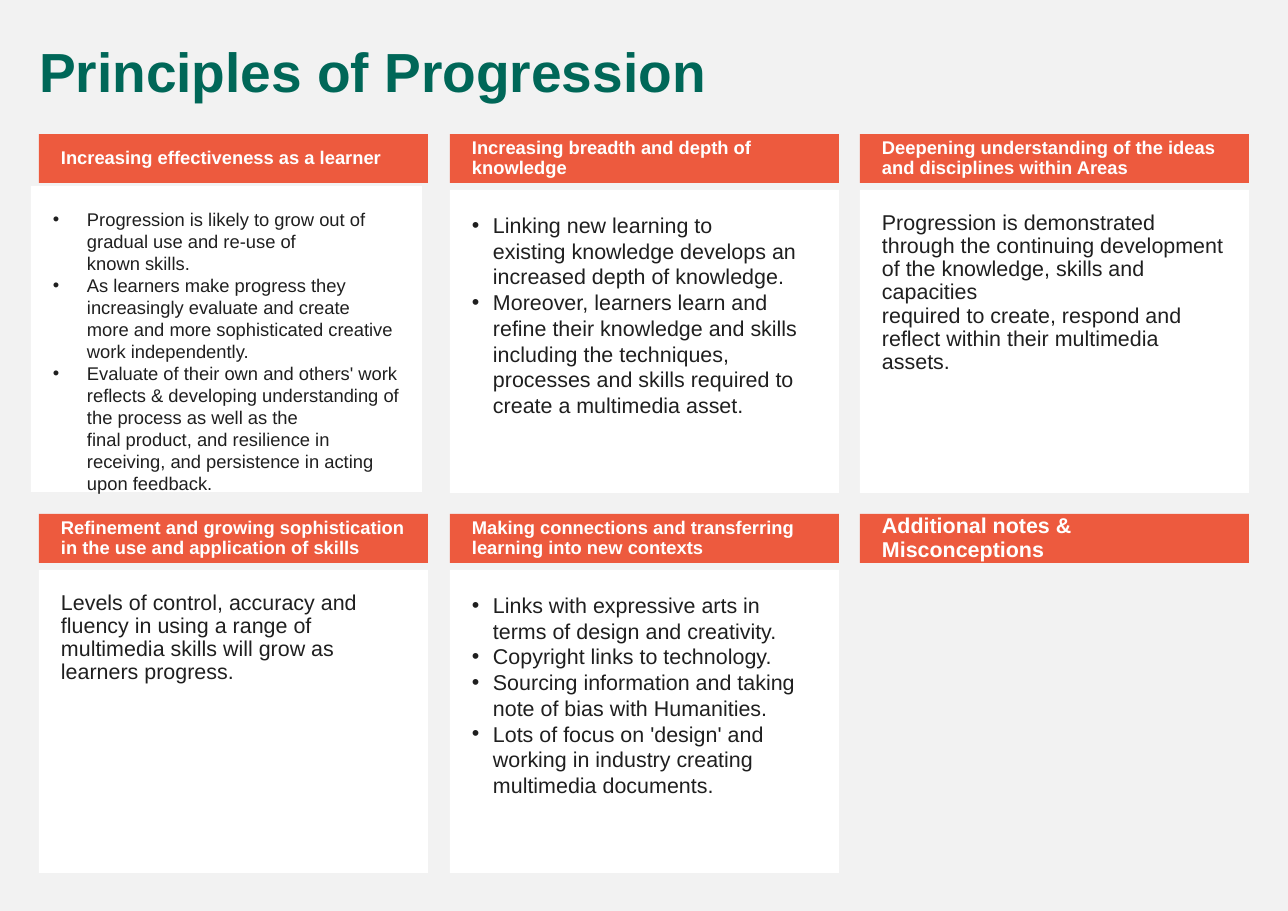
from pptx import Presentation
from pptx.dml.color import RGBColor
from pptx.enum.shapes import MSO_SHAPE
from pptx.enum.text import MSO_ANCHOR, MSO_AUTO_SIZE, PP_ALIGN
from pptx.oxml.ns import qn
from pptx.util import Pt
from lxml import etree

RECTANGLE = MSO_SHAPE.RECTANGLE
TOP, MIDDLE = MSO_ANCHOR.TOP, MSO_ANCHOR.MIDDLE
LEFT = PP_ALIGN.LEFT
NO_AUTOFIT = MSO_AUTO_SIZE.NONE

GREY = RGBColor(0xF2, 0xF2, 0xF2)
WHITE = RGBColor(0xFF, 0xFF, 0xFF)
ORANGE = RGBColor(0xED, 0x5A, 0x3E)
GREEN = RGBColor(0x00, 0x67, 0x58)
INK = RGBColor(0x1F, 0x1F, 0x1F)

# Content, in reading order; "~" stands for a non-breaking space
TITLE = "Principles of Progression"
CARDS = [
    dict(heading="Increasing effectiveness as a learner", size=12, indent=34,
         box=(31, 186, 391, 306), body=[
             "Progression is likely to grow out of gradual use and re-use of known~skills.",
             "As learners make progress they increasingly evaluate and create "
             "more~and more sophisticated creative work independently.",
             "Evaluate of their own and others' work reflects & developing~understanding "
             "of the process as well as the final~product, and resilience~in receiving, "
             "and persistence in acting upon feedback."]),
    dict(heading="Increasing breadth and depth of knowledge", indent=21, body=[
        "Linking new learning to existing~knowledge develops an increased~depth "
        "of~knowledge.",
        "Moreover, learners learn and refine~their knowledge and skills including "
        "the~techniques, processes and skills~required to create a multimedia asset."]),
    dict(heading="Deepening understanding of the ideas and~disciplines within Areas", body=[
        "Progression is demonstrated through the~continuing development of the "
        "knowledge,~skills and capacities required~to~create,~respond and reflect "
        "within~their~multimedia assets."]),
    dict(heading="Refinement and growing sophistication in the use and~application of skills",
         body=["Levels of control, accuracy and fluency in~using a range of multimedia "
               "skills will grow~as learners progress."]),
    dict(heading="Making connections and transferring learning into~new contexts",
         indent=21, body=[
             "Links with expressive arts in terms of~design and creativity.",
             "Copyright~links to technology.",
             "Sourcing information and taking note~of~bias with~Humanities.",
             "Lots of focus on~'design' and working~in~industry creating multimedia "
             "documents."]),
    dict(heading="Additional notes & Misconceptions", heading_size=14),
]

# Layout in pixels
SCALE = 914400 / 110.2
COLUMNS, ROWS = (39, 450, 860), (134, 514)
CARD_WIDTH, HEADING_HEIGHT = 389, 49
BODY_OFFSET, BODY_HEIGHT = 56, 303


def emu(pixels):
    return round(pixels * SCALE)


def write(shape, paragraphs, size, color, bold=False, anchor=TOP,
          margins=(22, 22, 22, 22), spacing=0.9, indent=0):
    frame = shape.text_frame
    frame.word_wrap = True
    frame.auto_size = NO_AUTOFIT
    frame.vertical_anchor = anchor
    (frame.margin_left, frame.margin_top,
     frame.margin_right, frame.margin_bottom) = map(emu, margins)
    frame.text = "\n".join(paragraphs).replace("~", "\u00a0")
    for paragraph in frame.paragraphs:
        paragraph.alignment = LEFT
        paragraph.line_spacing = spacing
        paragraph.space_before = Pt(0)
        font = paragraph.runs[0].font
        font.name, font.size, font.bold = "Arial", Pt(size), bold
        font.color.rgb = color
        if indent:
            properties = paragraph._p.get_or_add_pPr()
            properties.set("marL", str(emu(indent)))
            properties.set("indent", str(-emu(indent)))
            etree.SubElement(properties, qn("a:buFont"), typeface="Arial")
            etree.SubElement(properties, qn("a:buChar"), char="•")


def add_panel(slide, box, fill):
    shape = slide.shapes.add_shape(RECTANGLE, *map(emu, box))
    shape.shadow.inherit = False
    shape.fill.solid()
    shape.fill.fore_color.rgb = fill
    shape.line.fill.background()
    return shape


presentation = Presentation()
presentation.slide_width, presentation.slide_height = emu(1288), emu(911)
slide = presentation.slides.add_slide(presentation.slide_layouts[5])
slide.background.fill.solid()
slide.background.fill.fore_color.rgb = GREY

# Title
title = slide.shapes.title
title.left, title.top, title.width, title.height = map(emu, (28, 40, 1221, 71))
write(title, [TITLE], 36, GREEN, bold=True, margins=(11, 5, 11, 5))

# Cards: a heading bar over a white panel
for index, card in enumerate(CARDS):
    row, column = divmod(index, len(COLUMNS))
    left, top = COLUMNS[column], ROWS[row]
    heading = add_panel(slide, (left, top, CARD_WIDTH, HEADING_HEIGHT), ORANGE)
    write(heading, [card["heading"]], card.get("heading_size", 12), WHITE,
          bold=True, anchor=MIDDLE, margins=(22, 5, 11, 5))
    if "body" in card:
        box = card.get("box", (left, top + BODY_OFFSET, CARD_WIDTH, BODY_HEIGHT))
        indent = card.get("indent", 0)
        write(add_panel(slide, box, WHITE), card["body"], card.get("size", 14), INK,
              spacing=1.0 if indent else 0.9, indent=indent)

presentation.save("out.pptx")
